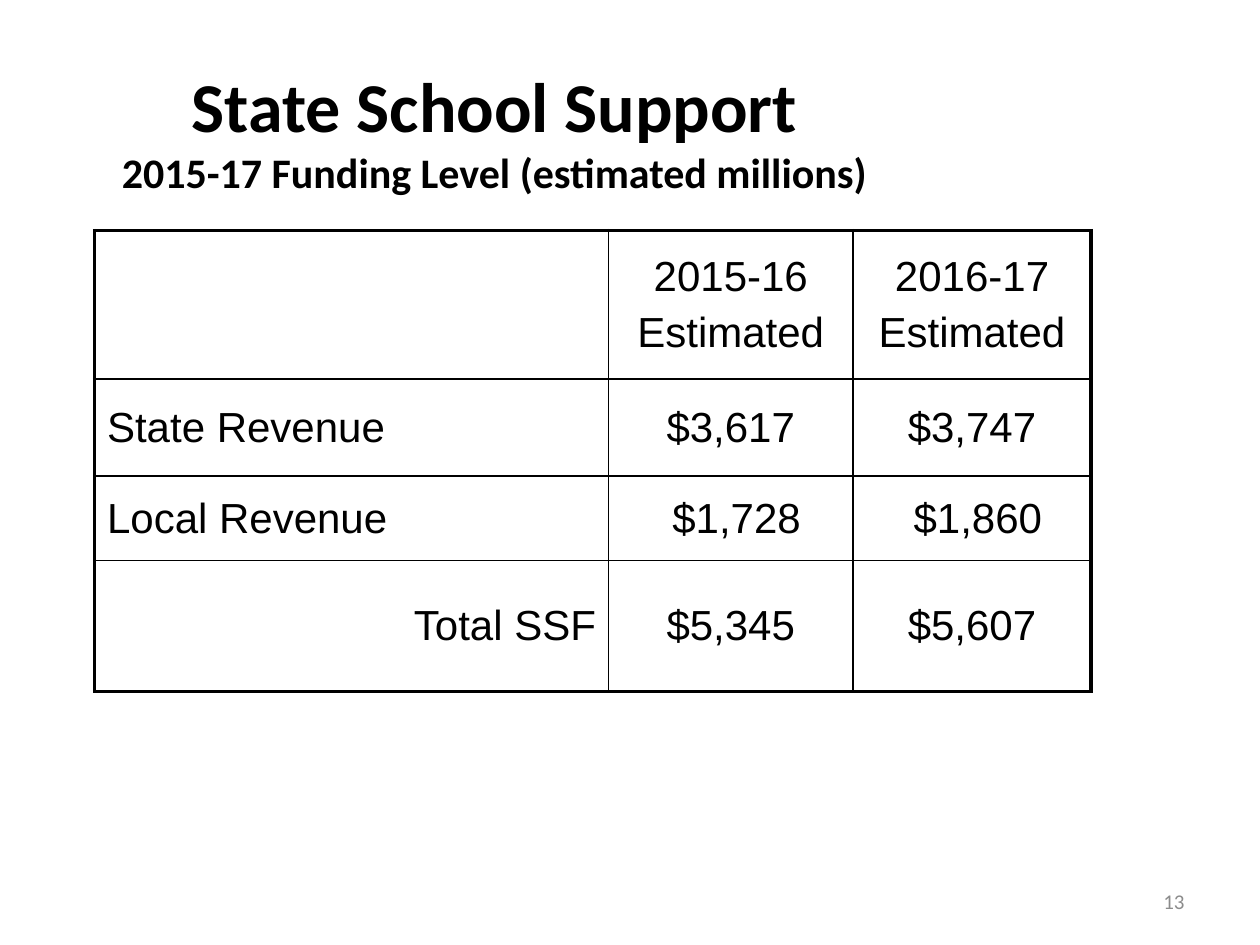
"""Build the State School Support funding slide."""
import pptx
import pptx.dml.color
import pptx.enum.text
import pptx.util
from lxml import etree
from pptx.oxml.ns import qn

Inches, Pt = pptx.util.Inches, pptx.util.Pt
ALIGN = pptx.enum.text.PP_ALIGN
MIDDLE = pptx.enum.text.MSO_ANCHOR.MIDDLE


def rgb(value):
    return pptx.dml.color.RGBColor.from_string(value)


def add_text(p, text, size=24, font="Arial", color="000000", bold=False, align=ALIGN.CENTER):
    p.alignment = align
    r = p.add_run()
    r.text = text
    r.font.size = Pt(size)
    r.font.name = font
    r.font.bold = bold
    r.font.color.rgb = rgb(color)


prs = pptx.Presentation()
prs.slide_width, prs.slide_height = Inches(10), Inches(7.5)
s = prs.slides.add_slide(prs.slide_layouts[6])

boxes = []
for box in [(7.17, 6.95, 2.33, 0.4), (0.17, 0.33, 7.51, 1.4)]:
    tf = s.shapes.add_textbox(*[Inches(v) for v in box]).text_frame
    tf.word_wrap = True
    tf.vertical_anchor = MIDDLE
    boxes.append(tf.paragraphs[0])

number, title = boxes
add_text(number, "13", size=12, font="Calibri", color="8C8C8C", align=ALIGN.RIGHT)
add_text(title, "State School Support", size=40, font="Calibri", bold=True)
title.add_line_break()
add_text(title, "2015-17 Funding Level (estimated millions)", font="Calibri", bold=True)

rows = [
    ["", "2015-16\nEstimated", "2016-17\nEstimated"],
    ["State Revenue", "$3,617", "$3,747"],
    ["Local Revenue", " $1,728", " $1,860"],
    ["Total SSF", "$5,345", "$5,607"],
]
widths = [4.08, 1.94, 1.89]
heights = [1.18, 0.77, 0.67, 1.04]
last_row, last_col = len(rows) - 1, len(widths) - 1

table = s.shapes.add_table(len(rows), len(widths), Inches(0.75), Inches(1.83),
                           Inches(sum(widths)), Inches(sum(heights))).table
table.first_row = table.horz_banding = False
for column, width in zip(table.columns, widths):
    column.width = Inches(width)
for row, height in zip(table.rows, heights):
    row.height = Inches(height)

for i, row in enumerate(rows):
    for j, text in enumerate(row):
        cell = table.cell(i, j)
        cell.vertical_anchor = MIDDLE
        outer = {"lnL": j == 0, "lnR": j == last_col, "lnT": i == 0, "lnB": i == last_row}
        for tag, is_outer in outer.items():
            ln = etree.SubElement(cell._tc.get_or_add_tcPr(), qn("a:" + tag),
                                  w=str(Pt(2.25 if is_outer else 1)))
            fill = etree.SubElement(ln, qn("a:solidFill"))
            etree.SubElement(fill, qn("a:srgbClr"), val="000000")
        cell.fill.background()
        if j > 0:
            align = ALIGN.CENTER
        else:
            align = ALIGN.RIGHT if i == last_row else ALIGN.LEFT
        tf = cell.text_frame
        for k, line in enumerate(text.splitlines()):
            p = tf.add_paragraph() if k else tf.paragraphs[0]
            if k:
                p.space_before = Pt(4.8)
            add_text(p, line, align=align)

prs.save("out.pptx")
